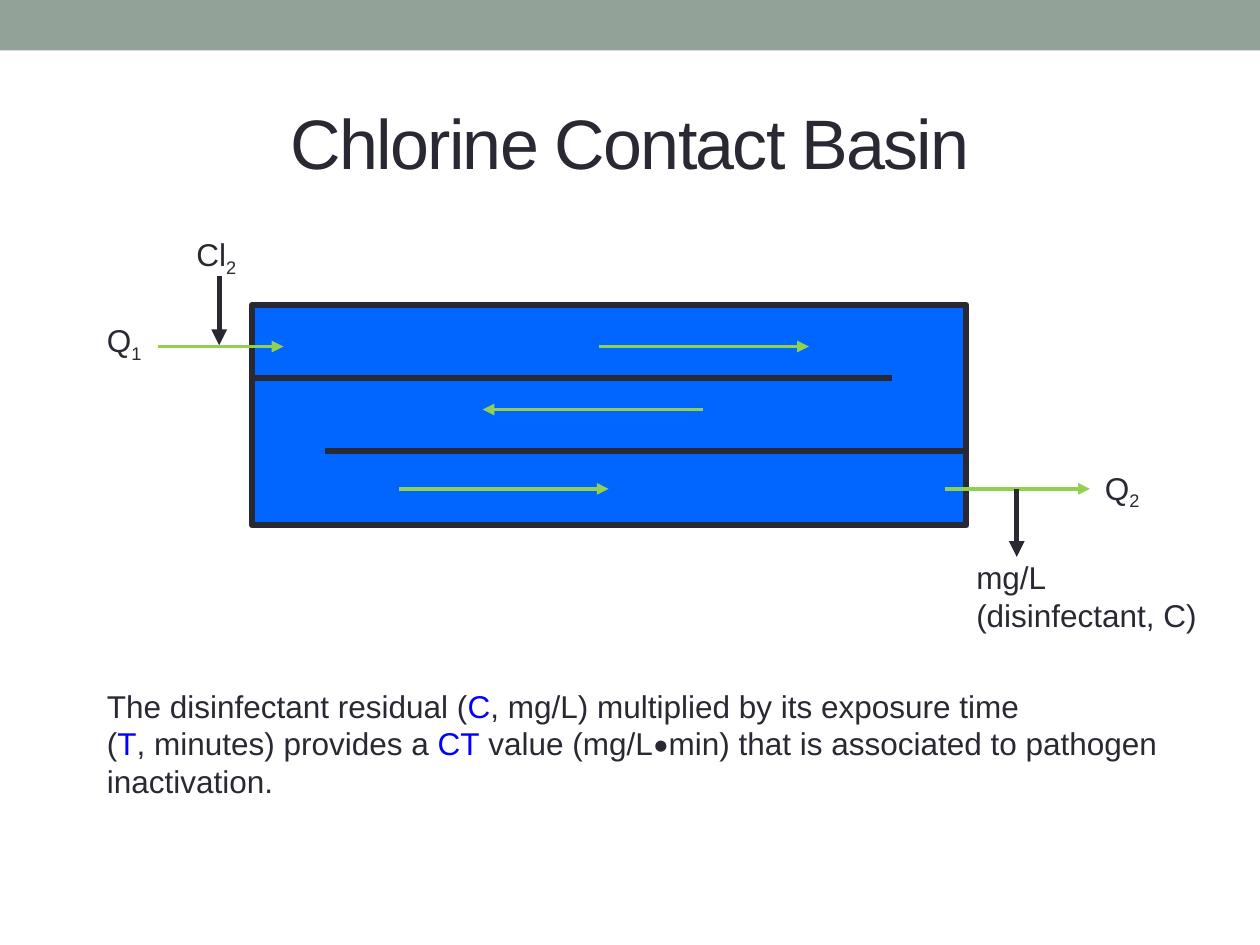
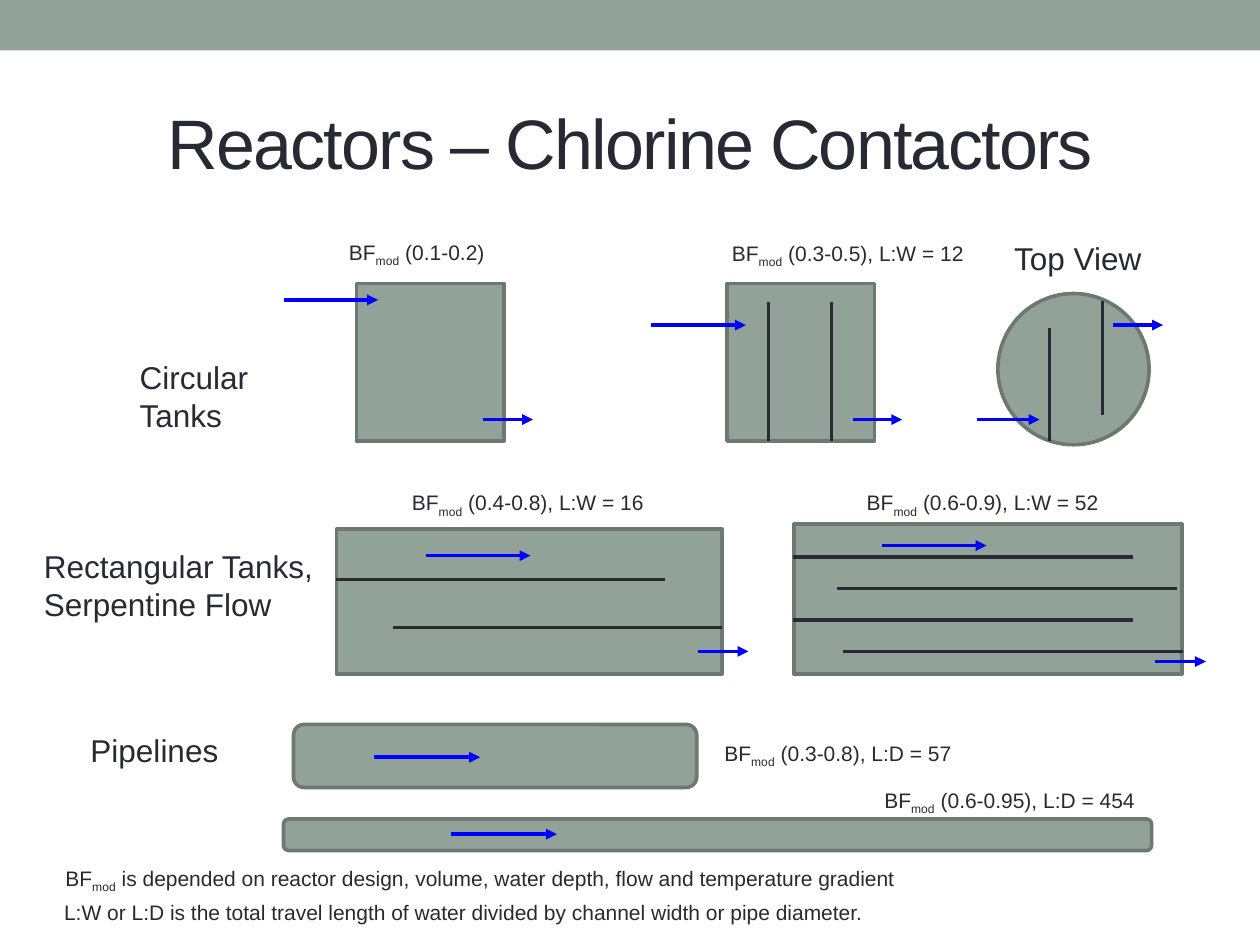
from lxml.etree import SubElement
from pptx import Presentation
from pptx.dml.color import RGBColor
from pptx.enum.shapes import MSO_CONNECTOR, MSO_SHAPE
from pptx.enum.text import MSO_ANCHOR, MSO_AUTO_SIZE, PP_ALIGN
from pptx.oxml.ns import qn
from pptx.util import Inches, Pt

INK, SAGE, SAGE_EDGE = "292934", "93A299", "6D7871"
BLUE, WATER, GREEN = "0000FF", "0066FF", "92D050"
THIN, FLOW, THICK, WALL = 2.08, 2.25, 3, 3.5


def color(value):
    """Turn a hex string into a colour."""
    return RGBColor.from_string(value)


def set_all(target, values):
    """Set each attribute named in a dict."""
    for name, value in values.items():
        setattr(target, name, value)


class Deck:
    """Hold the shared style and the slide being drawn."""

    def __init__(self):
        """Open a deck of 10 by 7.5 inches."""
        self.presentation = Presentation()
        set_all(self.presentation, {"slide_width": Inches(10), "slide_height": Inches(7.5)})
        self.page = None

    def start_page(self, title):
        """Add a slide with its band and title."""
        self.page = self.presentation.slides.add_slide(self.presentation.slide_layouts[5])
        self.shape(0, 0, 10, 0.4, SAGE)
        box = self.page.shapes.title
        set_all(box, {"left": Inches(0.5), "top": Inches(0.58),
                      "width": Inches(9), "height": Inches(1.08)})
        set_all(box.text_frame, {"vertical_anchor": MSO_ANCHOR.MIDDLE, "word_wrap": True,
                                 "auto_size": MSO_AUTO_SIZE.NONE})
        para = box.text_frame.paragraphs[0]
        para.alignment = PP_ALIGN.CENTER
        self.span(para, title, 40).set("spc", "-100")

    def span(self, para, text, size, hue=INK, font="Arial"):
        """Add one formatted run and return its properties."""
        span = para.add_run()
        span.text = text
        set_all(span.font, {"name": font, "size": Pt(size)})
        span.font.color.rgb = color(hue)
        return span.font._element

    def text(self, left, top, width, height, paragraphs, size=18, wrap=False):
        """Add a text box; each paragraph is a list of (text, kind) parts."""
        box = self.page.shapes.add_textbox(Inches(left), Inches(top),
                                           Inches(width), Inches(height))
        frame = box.text_frame
        set_all(frame, {"word_wrap": wrap, "auto_size": MSO_AUTO_SIZE.SHAPE_TO_FIT_TEXT})
        for index, parts in enumerate(paragraphs):
            para = frame.add_paragraph() if index else frame.paragraphs[0]
            for words, kind in parts:
                properties = self.span(para, words, size,
                                       BLUE if kind == "key" else INK,
                                       "Calibri" if kind == "dot" else "Arial")
                if kind == "sub":
                    properties.set("baseline", "-25000")

    def label(self, left, top, width, *lines):
        """Add a plain label with one paragraph a line."""
        self.text(left, top, width, 0.1 + 0.3 * len(lines), [[(line, "")] for line in lines])

    def symbol(self, left, top, letters, index):
        """Add a symbol with a subscript."""
        self.text(left, top, 0.54, 0.4, [[(letters, ""), (index, "sub")]], wrap=True)

    def factor(self, left, top, width, rest):
        """Add a small text that starts with the baffling factor."""
        self.text(left, top, width, 0.3, [[("BF", ""), ("mod", "sub"), (rest, "")]], 12)

    def shape(self, left, top, width, height, fill, edge=None, weight=THIN,
              kind=MSO_SHAPE.RECTANGLE):
        """Add a filled preset shape."""
        shape = self.page.shapes.add_shape(kind, Inches(left), Inches(top),
                                           Inches(width), Inches(height))
        shape.shadow.inherit = False
        shape.fill.solid()
        shape.fill.fore_color.rgb = color(fill)
        if edge:
            shape.line.color.rgb = color(edge)
            shape.line.width = Pt(weight)
        else:
            shape.line.fill.background()

    def tank(self, left, top, width, height, kind=MSO_SHAPE.RECTANGLE):
        """Add a reactor outline."""
        self.shape(left, top, width, height, SAGE, SAGE_EDGE, kind=kind)

    def line(self, x1, y1, x2, y2, hue=INK, weight=THIN, arrow=False):
        """Add a straight line, with an arrowhead if asked."""
        line = self.page.shapes.add_connector(MSO_CONNECTOR.STRAIGHT, Inches(x1), Inches(y1),
                                              Inches(x2), Inches(y2))
        line.line.color.rgb = color(hue)
        line.line.width = Pt(weight)
        if arrow:
            SubElement(line.line._get_or_add_ln(), qn("a:tailEnd"), type="triangle")
        SubElement(line._element.spPr, qn("a:effectLst"))

    def flow(self, start, end, y, hue=BLUE, weight=THIN):
        """Add a level flow arrow."""
        self.line(start, y, end, y, hue, weight, True)


def contact_basin(deck):
    """Draw the baffled basin with its dose and sample points."""
    deck.start_page("Chlorine Contact Basin")
    deck.symbol(1.46, 1.82, "Cl", "2")
    deck.label(7.65, 4.38, 2.3, "mg/L", "(disinfectant, C)")
    deck.line(1.74, 2.19, 1.74, 2.74, weight=THICK, arrow=True)
    deck.shape(2, 2.42, 5.67, 1.75, WATER, INK, WALL)
    for left, right, y in [(2, 7.08, 3), (2.58, 7.67, 3.58)]:
        deck.line(left, y, right, y, weight=THICK)
    for start, end, y in [(4.75, 6.42, 2.75), (3.17, 4.83, 3.88), (5.58, 3.83, 3.25),
                          (1.25, 2.25, 2.75), (7.5, 8.65, 3.88)]:
        deck.flow(start, end, y, GREEN, FLOW)
    deck.symbol(0.75, 2.5, "Q", "1")
    deck.symbol(8.67, 3.67, "Q", "2")
    deck.line(8.07, 3.88, 8.07, 4.42, weight=THICK, arrow=True)
    deck.text(0.75, 5.4, 8.58, 1.01, [
        [("The disinfectant residual (", ""), ("C", "key"),
         (", mg/L) multiplied by its exposure time", "")],
        [("(", ""), ("T", "key"), (", minutes) provides a ", ""), ("CT", "key"),
         (" value (mg/L", ""), ("•", "dot"),
         ("min) that is associated to pathogen inactivation.", "")],
    ], wrap=True)


def chlorine_contactors(deck):
    """Draw circular, rectangular and pipeline reactors."""
    deck.start_page("Reactors – Chlorine Contactors")
    for left in (2.83, 5.77):
        deck.tank(left, 2.25, 1.17, 1.25)
    deck.tank(7.92, 2.33, 1.2, 1.2, MSO_SHAPE.OVAL)
    for x, bottom, top in [(6.1, 3.5, 2.4), (6.6, 3.5, 2.4), (8.33, 3.5, 2.6), (8.75, 3.29, 2.39)]:
        deck.line(x, bottom, x, top)

    deck.tank(2.67, 4.2, 3.06, 1.15)
    for left, y in [(2.67, 4.6), (3.12, 4.98)]:
        deck.line(left, y, left + 2.61, y)
    deck.tank(6.3, 4.16, 3.08, 1.19)
    for row, left in enumerate((6.29, 6.64, 6.29, 6.69)):
        y = 4.42 + 0.25 * row
        deck.line(left, y, left + 2.7, y)

    deck.tank(2.33, 5.75, 3.2, 0.5, MSO_SHAPE.ROUNDED_RECTANGLE)
    deck.tank(2.25, 6.5, 6.89, 0.25, MSO_SHAPE.ROUNDED_RECTANGLE)

    for start, end, y in [(2.25, 3, 2.38), (3.83, 4.23, 3.33), (5.17, 5.92, 2.58),
                          (6.77, 7.16, 3.33), (7.75, 8.25, 3.33), (8.83, 9.23, 2.58),
                          (3.38, 4.21, 4.41), (5.54, 5.94, 5.17), (7, 7.83, 4.33),
                          (9.17, 9.57, 5.25), (2.97, 3.81, 6.01), (3.58, 4.42, 6.62)]:
        deck.flow(start, end, y)

    deck.label(1.01, 2.79, 1.07, "Circular", "Tanks")
    deck.label(0.25, 4.29, 2.43, "Rectangular Tanks,", "Serpentine Flow")
    deck.label(0.62, 5.75, 1.23, "Pipelines")
    deck.label(7.95, 1.85, 1.22, "Top View")
    for left, top, width, rest in [
        (2.67, 1.85, 1.32, " (0.1-0.2)"),
        (5.71, 1.86, 2.09, " (0.3-0.5), L:W = 12"),
        (3.17, 3.84, 2.09, " (0.4-0.8), L:W = 16"),
        (6.78, 3.84, 2.09, " (0.6-0.9), L:W = 52"),
        (5.65, 5.83, 2.05, " (0.3-0.8), L:D = 57"),
        (6.92, 6.2, 2.24, " (0.6-0.95), L:D = 454"),
        (0.42, 6.82, 6.82, " is depended on reactor design, volume, water depth, "
                           "flow and temperature gradient"),
    ]:
        deck.factor(left, top, width, rest)
    deck.text(0.41, 7.09, 7.01, 0.3, [[("L:W or L:D is the total travel length of water divided "
                                        "by channel width or pipe diameter.", "")]], 12, True)


def main():
    """Build both slides and save the deck."""
    deck = Deck()
    contact_basin(deck)
    chlorine_contactors(deck)
    deck.presentation.save("out.pptx")


if __name__ == "__main__":
    main()
